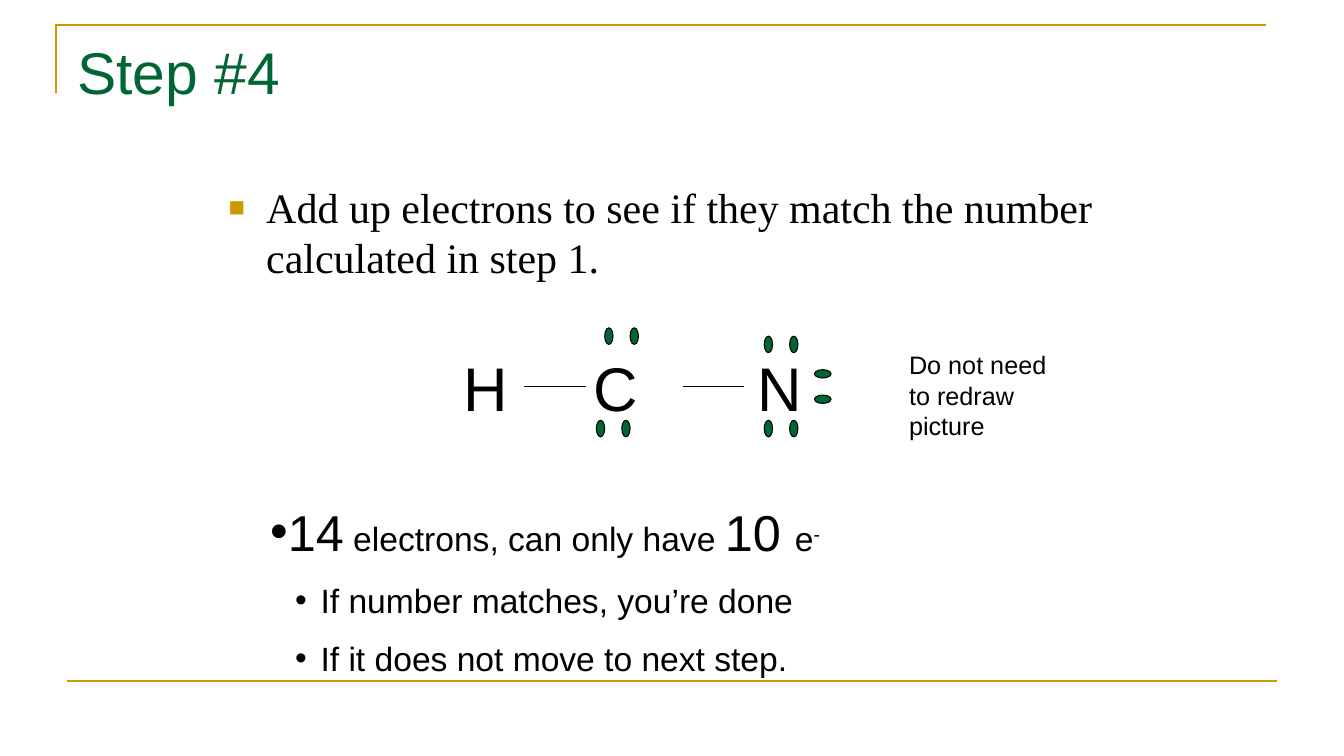
from lxml import etree
from pptx import Presentation
from pptx import util as u
from pptx.dml.color import RGBColor
from pptx.enum import shapes, text
from pptx.oxml.ns import qn

COLORS = {"gold": "CC9900", "green": "006633", "black": "000000"}
cm = u.Cm


def color(name):
    return RGBColor.from_string(COLORS[name])


def style_line(shape, name, width):
    shape.line.color.rgb = color(name)
    shape.line.width = u.Pt(width)


def style_font(font, size, name="Arial", color_name="black"):
    font.size = u.Pt(size)
    font.name = name
    font.color.rgb = color(color_name)


def add_line(parent, start, end, name, width):
    line = parent.add_connector(shapes.MSO_CONNECTOR.STRAIGHT,
                                *(cm(value) for value in start + end))
    style_line(line, name, width)
    etree.SubElement(line._element.spPr, qn("a:effectLst"))


def add_text_box(parent, box):
    frame = parent.add_textbox(*(cm(value) for value in box)).text_frame
    frame.word_wrap = True
    return frame


def set_bullet(paragraph, character, margin=0, indent=0, name=None, percent=100):
    properties = paragraph._p.get_or_add_pPr()
    properties.set("marL", str(cm(margin)))
    properties.set("indent", str(cm(indent)))
    if name:
        fill = etree.SubElement(properties, qn("a:buClr"))
        etree.SubElement(fill, qn("a:srgbClr"), val=COLORS[name])
    etree.SubElement(properties, qn("a:buSzPct"), val=str(percent * 1000))
    etree.SubElement(properties, qn("a:buFont"), typeface="Arial")
    etree.SubElement(properties, qn("a:buChar"), char=character)


def add_frame(slide, left, top, width, height):
    """Draw the corner bracket at the top and the rule at the bottom."""
    builder = slide.shapes.build_freeform(cm(left), cm(top + 1.7))
    builder.add_line_segments([(cm(left), cm(top)), (cm(left + width), cm(top))],
                              close=False)
    bracket = builder.convert_to_shape()
    bracket.shadow.inherit = False
    bracket.fill.background()
    style_line(bracket, "gold", 1.5)
    bottom = top + height
    add_line(slide.shapes, (left + 0.28, bottom), (left + width + 0.28, bottom), "gold", 1.5)


def add_title(slide, left, top, width, height):
    title = slide.shapes.title
    title.left, title.top, title.width, title.height = map(cm, (left, top, width, height))
    title.text_frame.text = "Step #4"
    title.text_frame.vertical_anchor = text.MSO_ANCHOR.TOP
    paragraph = title.text_frame.paragraphs[0]
    paragraph.alignment = text.PP_ALIGN.LEFT
    style_font(paragraph.font, 42, color_name="green")


def add_instruction(slide, *box):
    paragraph = add_text_box(slide.shapes, box).paragraphs[0]
    paragraph.text = "Add up electrons to see if they match the number calculated in step 1."
    style_font(paragraph.font, 30, "Times New Roman")
    set_bullet(paragraph, "■", 0.95, -0.95, "gold", 65)


def add_electron_pair(parent, left, top, sideways=False):
    gap = 0.64
    for index in range(2):
        x, y = (left, top + index * gap) if sideways else (left + index * gap, top)
        electron = parent.add_shape(shapes.MSO_SHAPE.OVAL, cm(x), cm(y), cm(0.21), cm(0.42))
        electron.rotation = 270 if sideways else 0
        electron.shadow.inherit = False
        electron.fill.solid()
        electron.fill.fore_color.rgb = color("green")
        style_line(electron, "black", 0.75)


def add_molecule(slide, left, top, width, height):
    parent = slide.shapes.add_group_shape().shapes
    paragraph = add_text_box(parent, (left, top, width, height)).paragraphs[0]
    paragraph.text = "H\tC\tN"
    style_font(paragraph.font, 44)
    tabs = etree.SubElement(paragraph._p.get_or_add_pPr(), qn("a:tabLst"))
    for position in (3.28, 7.41):
        etree.SubElement(tabs, qn("a:tab"), pos=str(cm(position)), algn="l")
    bond_y = top + 1.04
    for offset in (1.78, 5.77):
        add_line(parent, (left + offset, bond_y), (left + offset + 1.56, bond_y), "black", 0.75)
    for x, y, sideways in ((3.81, -0.43, False), (3.6, 1.9, False), (7.83, -0.22, False),
                           (7.83, 1.9, False), (9.2, 0.52, True)):
        add_electron_pair(parent, left + x, top + y, sideways)


def add_conclusion(slide, *box):
    frame = add_text_box(slide.shapes, box)
    count = frame.paragraphs[0]
    for words, size in (("14", 36), (" electrons, can only have ", 24), ("10 ", 36),
                        ("e", 24), ("-", 24)):
        run = count.add_run()
        run.text = words
        style_font(run.font, size)
    run._r.get_or_add_rPr().set("baseline", "30000")
    set_bullet(count, "•")
    for words in ("If number matches, you’re done", "If it does not move to next step."):
        paragraph = frame.add_paragraph()
        paragraph.text = words
        paragraph.level = 1
        paragraph.space_before = u.Pt(13)
        style_font(paragraph.font, 24)
        set_bullet(paragraph, "•", 1.27, -0.64)


def add_note(slide, *box):
    paragraph = add_text_box(slide.shapes, box).paragraphs[0]
    paragraph.text = "Do not need to redraw picture"
    style_font(paragraph.font, 18)


def main():
    presentation = Presentation()
    presentation.slide_width, presentation.slide_height = cm(33.87), cm(19.05)
    slide = presentation.slides.add_slide(presentation.slide_layouts[5])
    add_frame(slide, 1.42, 0.64, 30.48, 16.51)
    add_title(slide, 1.7, 0.76, 30.48, 3.18)
    add_instruction(slide, 5.51, 4.45, 22.86, 3.96)
    add_molecule(slide, 11.43, 8.69, 13.54, 2.11)
    add_conclusion(slide, 6.56, 12.5, 20.52, 4.88)
    add_note(slide, 22.66, 8.69, 4.24, 2.57)
    presentation.save("out.pptx")


if __name__ == "__main__":
    main()
